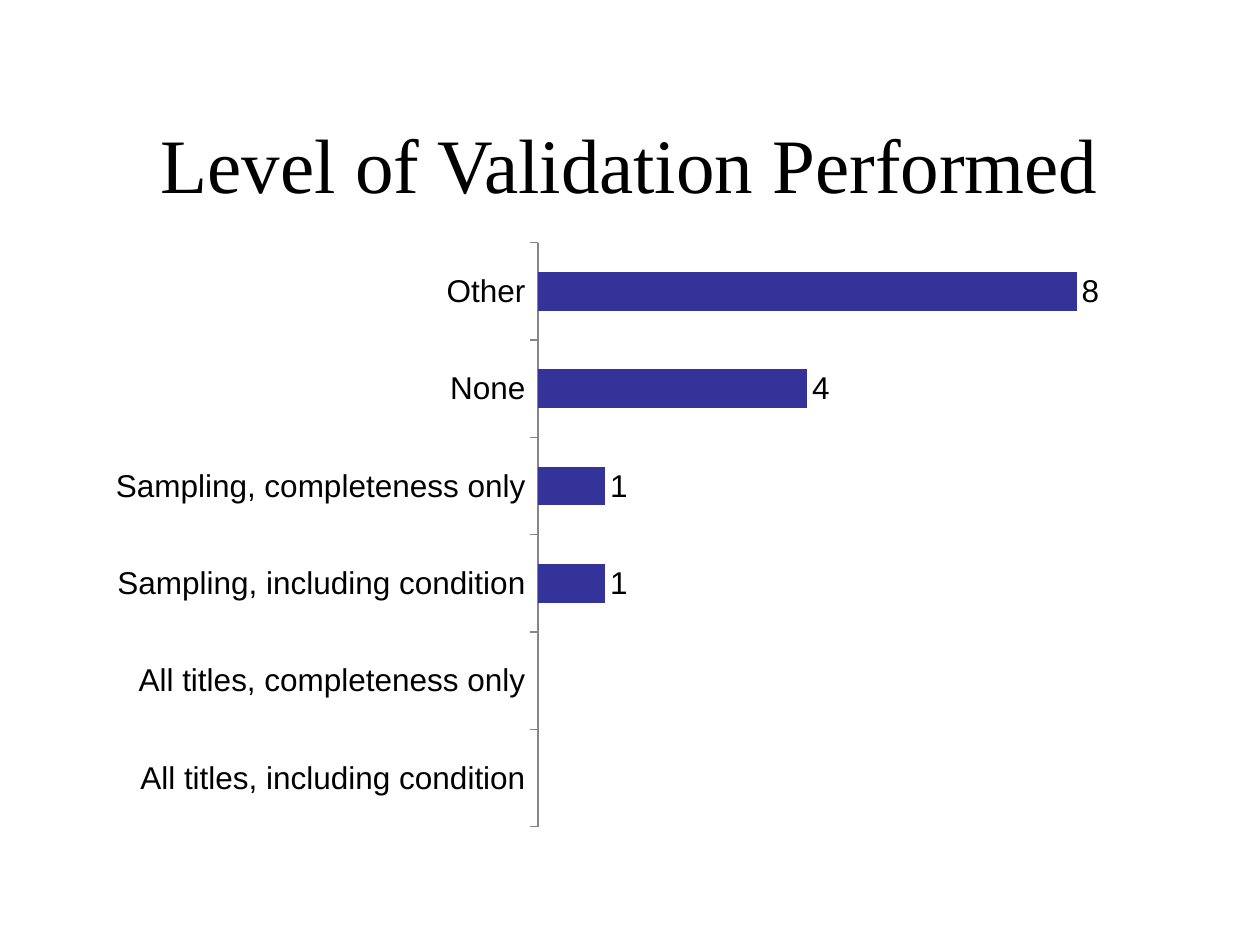
from pptx import Presentation
from pptx.chart.data import CategoryChartData
from pptx.dml.color import RGBColor
from pptx.enum.chart import XL_CHART_TYPE, XL_LABEL_POSITION, XL_TICK_MARK
from pptx.enum.text import MSO_ANCHOR, PP_ALIGN
from pptx.oxml import parse_xml
from pptx.oxml.ns import nsdecls
from pptx.util import Inches, Pt

COLORS = {"text": "000000", "bar": "333399", "axis": "868686"}

# Bar charts list their categories from the bottom up
LEVELS = {
    "All titles, including condition": None,
    "All titles, completeness only": None,
    "Sampling, including condition": 1,
    "Sampling, completeness only": 1,
    "None": 4,
    "Other": 8,
}


def color(name):
    return RGBColor.from_string(COLORS[name])


def style_font(font, name, size):
    font.name = name
    font.size = Pt(size)
    font.color.rgb = color("text")


def add_title(page, text):
    title = page.shapes.title
    title.left, title.top = Inches(0.75), Inches(0.67)
    title.width, title.height = Inches(8.5), Inches(1.25)
    frame = title.text_frame
    frame.word_wrap = True
    frame.vertical_anchor = MSO_ANCHOR.MIDDLE
    para = frame.paragraphs[0]
    para.alignment = PP_ALIGN.CENTER
    span = para.add_run()
    span.text = text
    style_font(span.font, "Times New Roman", 44)


def place_plot(chart, **shares):
    """Fix the inner plot area as shares of the chart's size."""
    values = "".join(f'<c:{key} val="{share}"/>' for key, share in shares.items())
    layout = parse_xml(
        f'<c:layout {nsdecls("c")}><c:manualLayout>'
        '<c:layoutTarget val="inner"/><c:xMode val="edge"/><c:yMode val="edge"/>'
        f"{values}</c:manualLayout></c:layout>"
    )
    plot_area = chart.plots[0]._element.getparent()
    for old_layout in plot_area.xpath("c:layout"):
        plot_area.remove(old_layout)
    plot_area.insert(0, layout)


def add_bar_chart(page, values):
    data = CategoryChartData()
    data.categories = list(values)
    data.add_series("Series 1", list(values.values()))
    chart = page.shapes.add_chart(
        XL_CHART_TYPE.BAR_CLUSTERED,
        Inches(0.75), Inches(1.83), Inches(8.5), Inches(4.83), data,
    ).chart
    chart.has_legend = False
    chart.has_title = False
    style_font(chart.font, "Arial", 18)

    # Axes
    levels = chart.category_axis
    levels.major_tick_mark = XL_TICK_MARK.OUTSIDE
    levels.has_major_gridlines = False
    levels.format.line.color.rgb = color("axis")
    levels.format.line.width = Pt(0.75)
    counts = chart.value_axis
    counts.visible = False
    counts.has_major_gridlines = False
    counts.minimum_scale, counts.maximum_scale = 0, 9

    # Bars and their values
    plot = chart.plots[0]
    plot.gap_width = 150
    plot.vary_by_categories = False
    bars = plot.series[0]
    bars.format.fill.solid()
    bars.format.fill.fore_color.rgb = color("bar")
    labels = bars.data_labels
    labels.show_value = True
    labels.position = XL_LABEL_POSITION.OUTSIDE_END
    style_font(labels.font, "Arial", 18)
    place_plot(chart, x=0.414, y=0.02, w=0.566, h=0.96)


def main():
    deck = Presentation()
    deck.slide_width, deck.slide_height = Inches(10), Inches(7.5)
    page = deck.slides.add_slide(deck.slide_layouts[5])
    add_title(page, "Level of Validation Performed")
    add_bar_chart(page, LEVELS)
    deck.save("out.pptx")


if __name__ == "__main__":
    main()
